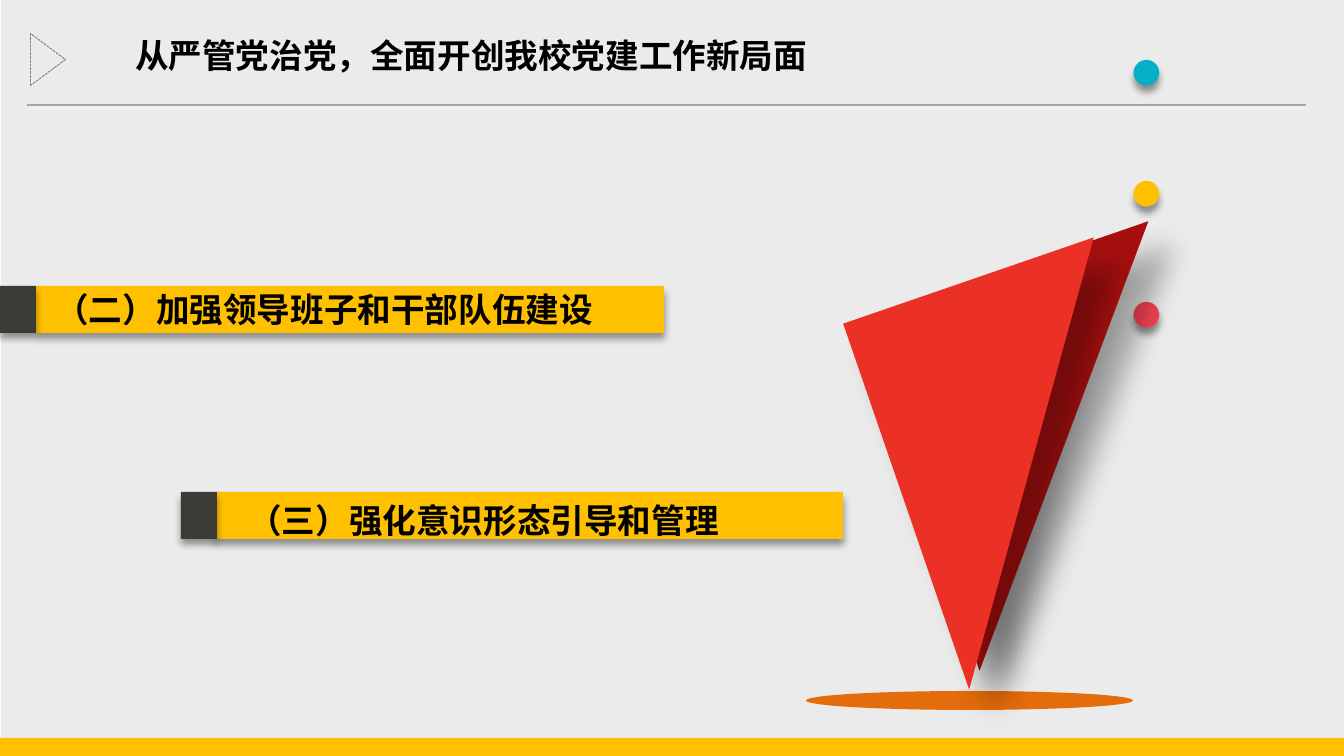
"""Build the party-building work slide with two headed bars and a red pointer."""
import pptx
import pptx.dml.color
import pptx.enum.dml
import pptx.enum.shapes
import pptx.enum.text
import pptx.oxml.ns
import pptx.util
from lxml import etree

RGB = pptx.dml.color.RGBColor
BLACK = RGB(0x00, 0x00, 0x00)
WHITE = RGB(0xFF, 0xFF, 0xFF)
RULE_GREY = RGB(0xA6, 0xA6, 0xA6)
MARKER_GREY = RGB(0x80, 0x80, 0x80)
CHARCOAL = RGB(0x3C, 0x3C, 0x37)
YELLOW = RGB(0xFF, 0xC0, 0x00)
TEAL = RGB(0x05, 0xAF, 0xC8)
CORAL = RGB(0xFA, 0x44, 0x53)
ORANGE = RGB(0xE4, 0x6C, 0x0A)
DARK_RED = RGB(0xA7, 0x0F, 0x0F)
RED = RGB(0xEB, 0x30, 0x25)

FONT = "Noto Sans CJK SC"
SCALE = 914400 / 134.4
WIDTH, HEIGHT = 1344, 756
BAR_SIZE, CAP_SIZE = (628, 47), (36, 47)

SOFT = (BLACK, 40, 4, 3, 90)
DEEP = (BLACK, 30, 15, 18, 45)
ENGRAVED = (WHITE, 100, 1, 1, 90)

TITLE = ("从严管党治党，全面开创我校党建工作新局面", (122, 27, 710, 54))
DOTS = [("· ", TEAL), ("· ", YELLOW), ("·", CORAL)]
TOPICS = [
    ("（二）加强领导班子和干部队伍建设", (36, 286), (0, 286), (42, 281, 675, 54)),
    ("（三）强化意识形态引导和管理", (215, 492), (181, 492), (235, 492, 571, 54)),
]
FOOTERS = [(0, 749, WIDTH, 22), (0, 738, WIDTH, 32)]
POINTER = [((911, 261, 306, 370), DARK_RED), ((899, 270, 265, 387), RED)]

SHAPES = pptx.enum.shapes.MSO_SHAPE
ALIGN = pptx.enum.text.PP_ALIGN


def px(length):
    return pptx.util.Emu(round(length * SCALE))


def add_xml(parent, tag, **values):
    return etree.SubElement(parent, pptx.oxml.ns.qn(tag), values)


def set_effect(item, shadow=None):
    effects = add_xml(item._element.spPr, "a:effectLst")
    if shadow:
        color, opacity, blur, distance, angle = shadow
        outer = add_xml(effects, "a:outerShdw", blurRad=str(blur * 12700),
                        dist=str(distance * 12700), dir=str(angle * 60000),
                        rotWithShape="0")
        tint = add_xml(outer, "a:srgbClr", val=str(color))
        add_xml(tint, "a:alpha", val=str(opacity * 1000))


def add_form(kind, box, color=None, shadow=None, rotation=0, flip=None):
    form = slide.shapes.add_shape(kind, *map(px, box))
    form.rotation = rotation
    form.line.fill.background()
    if color is None:
        form.fill.background()
    else:
        form.fill.solid()
        form.fill.fore_color.rgb = color
    if flip:
        form._element.spPr.xfrm.set(flip, "1")
    return form, shadow


def place(kind, box, color=None, shadow=None, **turn):
    form, shadow = add_form(kind, box, color, shadow, **turn)
    set_effect(form, shadow)
    return form


def write(runs, box, size=18, top=8, align=ALIGN.LEFT):
    label = slide.shapes.add_textbox(*map(px, box))
    frame = label.text_frame
    for name, value in {"word_wrap": True, "margin_top": px(top)}.items():
        setattr(frame, name, value)
    paragraph = frame.paragraphs[0]
    layout = {"alignment": align, "line_spacing": pptx.util.Pt(size * 1.2)}
    for name, value in layout.items():
        setattr(paragraph, name, value)
    for words, color in runs:
        run = paragraph.add_run()
        run.text = words
        style = {"size": pptx.util.Pt(size), "bold": True, "name": FONT}
        for name, value in style.items():
            setattr(run.font, name, value)
        run.font.color.rgb = color
        add_xml(run._r.get_or_add_rPr(), "a:ea", typeface=FONT)
    return label


deck = pptx.Presentation()
deck.slide_width, deck.slide_height = px(WIDTH), px(HEIGHT)
slide = deck.slides.add_slide(deck.slide_layouts[6])

veil = place(SHAPES.RECTANGLE, (1, 0, 1348, 747), BLACK)
veil_color = veil._element.spPr.find(".//" + pptx.oxml.ns.qn("a:srgbClr"))
add_xml(veil_color, "a:alpha", val="8000")

rule = slide.shapes.add_connector(
    pptx.enum.shapes.MSO_CONNECTOR.STRAIGHT, *map(px, (27, 105, 1306, 105)))
rule.line.color.rgb = RULE_GREY
rule.line.width = pptx.util.Pt(0.75)
set_effect(rule, ENGRAVED)

dots = write(DOTS, (1083, -5, 222, 136), size=54, top=16, align=ALIGN.JUSTIFY)
set_effect(dots, SOFT)

for box in FOOTERS:
    place(SHAPES.RECTANGLE, box, YELLOW, SOFT)

marker = place(SHAPES.FLOWCHART_MERGE, (22, 42, 52, 35), rotation=270)
marker.line.color.rgb = MARKER_GREY
marker_line = {"width": pptx.util.Pt(0.5),
               "dash_style": pptx.enum.dml.MSO_LINE.SQUARE_DOT}
for name, value in marker_line.items():
    setattr(marker.line, name, value)

for topic, bar, cap, box in TOPICS:
    place(SHAPES.RECTANGLE, bar + BAR_SIZE, YELLOW, SOFT)
    place(SHAPES.RECTANGLE, cap + CAP_SIZE, CHARCOAL, SOFT)
    write([(topic, BLACK)], box)

place(SHAPES.OVAL, (806, 691, 327, 19), ORANGE, flip="flipV")
for box, color in POINTER:
    place(SHAPES.RIGHT_TRIANGLE, box, color, DEEP, rotation=161, flip="flipH")

title, title_box = TITLE
write([(title, BLACK)], title_box)

deck.save("out.pptx")
